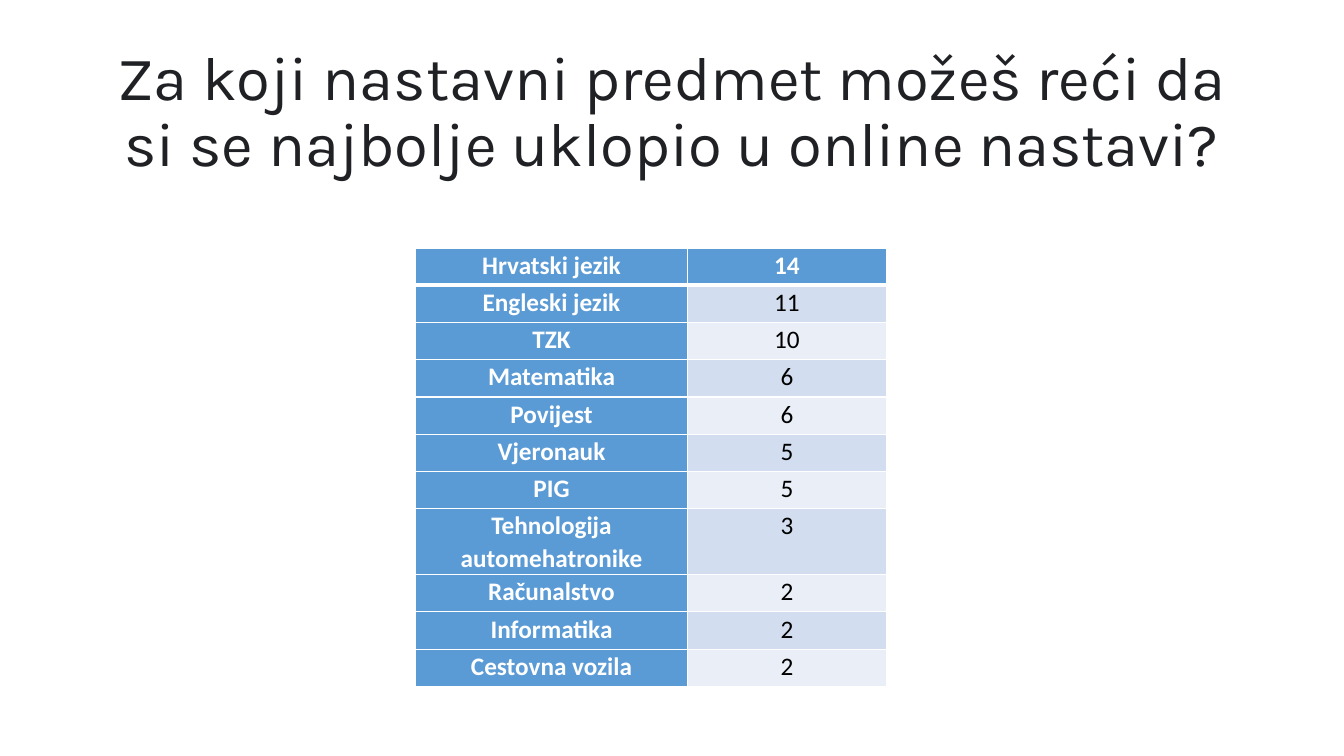
"""Build a slide with a table of school subjects that suited online classes best."""
from lxml import etree
from pptx import Presentation
from pptx.dml.color import RGBColor
from pptx.enum.text import MSO_ANCHOR, MSO_AUTO_SIZE, PP_ALIGN
from pptx.oxml import parse_xml
from pptx.util import Inches, Pt

WHITE = RGBColor(0xFF, 0xFF, 0xFF)
BLACK = RGBColor(0x00, 0x00, 0x00)
INK = RGBColor(0x20, 0x21, 0x24)
BLUE = RGBColor(0x5B, 0x9B, 0xD5)
BANDS = [RGBColor(0xEA, 0xEF, 0xF7), RGBColor(0xD2, 0xDE, 0xEF)]
DRAWING = "http://schemas.openxmlformats.org/drawingml/2006/main"

SUBJECTS = [
    ("Hrvatski jezik", 14),
    ("Engleski jezik", 11),
    ("TZK", 10),
    ("Matematika", 6),
    ("Povijest", 6),
    ("Vjeronauk", 5),
    ("PIG", 5),
    ("Tehnologija automehatronike", 3),
    ("Računalstvo", 2),
    ("Informatika", 2),
    ("Cestovna vozila", 2),
]


def write(frame, text, font="Calibri", size=18, color=BLACK, bold=False, spacing=1.07):
    """Put one centred, formatted line of text in a text frame."""
    para = frame.paragraphs[0]
    para.alignment = PP_ALIGN.CENTER
    para.line_spacing = spacing
    span = para.add_run()
    span.text = text
    span.font.name = font
    span.font.size = Pt(size)
    span.font.bold = bold
    span.font.color.rgb = color


def add_border(cell, side, points):
    """Draw a white line on one side (L, R, T or B) of a table cell."""
    line = parse_xml(f'<a:ln{side} xmlns:a="{DRAWING}" w="{Pt(points)}"/>')
    fill = etree.SubElement(line, f"{{{DRAWING}}}solidFill")
    etree.SubElement(fill, f"{{{DRAWING}}}srgbClr", val=str(WHITE))
    cell._tc.get_or_add_tcPr().append(line)


deck = Presentation()
deck.slide_width = Inches(13.33)
deck.slide_height = Inches(7.5)
page = deck.slides.add_slide(deck.slide_layouts[5])

title = page.shapes.title
title.left, title.top = Inches(0.92), Inches(0.4)
title.width, title.height = Inches(11.5), Inches(1.45)
title.text_frame.word_wrap = True
title.text_frame.auto_size = MSO_AUTO_SIZE.NONE
title.text_frame.vertical_anchor = MSO_ANCHOR.MIDDLE
write(title.text_frame, "Za koji nastavni predmet možeš reći da si se najbolje uklopio u online nastavi?",
      font="Karla", size=44, color=INK, spacing=0.9)

row_height = Inches(0.37)
table = page.shapes.add_table(len(SUBJECTS), 2, Inches(4.12), Inches(2.46),
                              Inches(4.67), row_height * len(SUBJECTS)).table
table.columns[0].width = Inches(2.7)
table.columns[1].width = Inches(1.97)

for row, subject in enumerate(SUBJECTS):
    table.rows[row].height = row_height
    for column, value in enumerate(subject):
        cell = table.cell(row, column)
        cell.margin_left = cell.margin_right = Inches(0.03)
        cell.margin_top = cell.margin_bottom = 0
        heading = row == 0 or column == 0
        write(cell.text_frame, str(value), color=WHITE if heading else BLACK, bold=heading)
        add_border(cell, "L", 1)
        add_border(cell, "R", 1)
        add_border(cell, "T", 3 if row == 1 else 1)
        add_border(cell, "B", 3 if row == 0 else 1)
        cell.fill.solid()
        cell.fill.fore_color.rgb = BLUE if heading else BANDS[row % 2]

deck.save("out.pptx")
